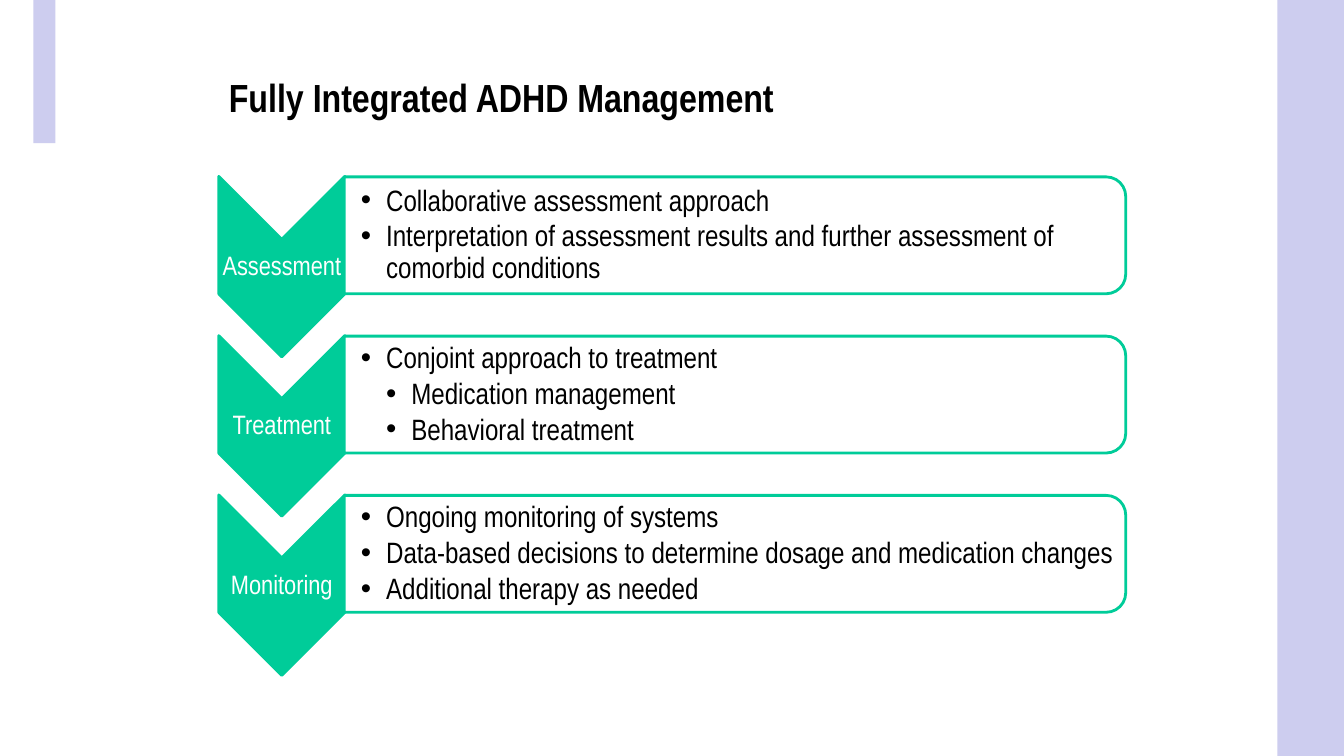
from lxml.etree import SubElement
from pptx import Presentation
from pptx.dml.color import RGBColor
from pptx.enum.shapes import MSO_SHAPE as Shape
from pptx.enum.text import MSO_ANCHOR as Anchor, MSO_AUTO_SIZE as Fit, PP_ALIGN as Align
from pptx.oxml.ns import qn
from pptx.util import Pt

PX = 9144
GREEN = RGBColor(0x00, 0xCC, 0x99)
LILAC = RGBColor(0xCD, 0xCD, 0xEF)
WHITE = RGBColor(0xFF, 0xFF, 0xFF)
BLACK = RGBColor(0x00, 0x00, 0x00)
STEP = 158
INDENT = 25
STAGES = [
    ("Assessment", [
        (1, "Collaborative assessment approach"),
        (1, "Interpretation of assessment results and further assessment of comorbid conditions"),
    ]),
    ("Treatment", [
        (1, "Conjoint approach to treatment"),
        (2, "Medication management"),
        (2, "Behavioral treatment"),
    ]),
    ("Monitoring", [
        (1, "Ongoing monitoring of systems"),
        (1, "Data-based decisions to determine dosage and medication changes"),
        (1, "Additional therapy as needed"),
    ]),
]


def draw(kind, box, fill, line=None, turn=0):
    shape = slide.shapes.add_shape(kind, *[n * PX for n in box])
    shape.shadow.inherit = False
    shape.rotation = turn
    shape.fill.solid()
    shape.fill.fore_color.rgb = fill
    if line is None:
        shape.line.fill.background()
    else:
        shape.line.color.rgb = line
        shape.line.width = Pt(2)


def write(frame, rows, size, color, inset, **form):
    look = dict(word_wrap=True, auto_size=Fit.NONE, vertical_anchor=Anchor.MIDDLE,
                margin_left=inset * PX, margin_right=PX, margin_top=PX, margin_bottom=PX)
    for name, value in look.items():
        setattr(frame, name, value)
    for i, (level, text) in enumerate(rows):
        para = frame.add_paragraph() if i else frame.paragraphs[0]
        para.text = text
        para.level = level
        for name, value in form.items():
            setattr(para, name, value)
        if level:
            props = para._p.get_or_add_pPr()
            props.set("marL", str(level * INDENT * PX))
            props.set("indent", str(-INDENT * PX))
            SubElement(props, qn("a:buFont"), typeface="Arial")
            SubElement(props, qn("a:buChar"), char="•")
        font = para.runs[0].font
        font.name = "Arial Narrow"
        font.size = Pt(size)
        font.color.rgb = color


deck = Presentation()
deck.slide_width, deck.slide_height = 1333 * PX, 750 * PX
slide = deck.slides.add_slide(deck.slide_layouts[5])

draw(Shape.RECTANGLE, (1267, 0, 66, 750), LILAC)
draw(Shape.RECTANGLE, (33, 0, 22, 142), LILAC)

title = slide.shapes.title
title.left, title.top, title.width, title.height = [n * PX for n in (217, 25, 883, 142)]
write(title.text_frame, [(0, "Fully Integrated ADHD Management")], 28, BLACK, 10,
      alignment=Align.LEFT)
title.text_frame.paragraphs[0].runs[0].font.bold = True

for i, (stage, points) in enumerate(STAGES):
    drop = i * STEP
    draw(Shape.CHEVRON, (190, 202 + drop, 179, 125), GREEN, GREEN, 90)
    label = slide.shapes.add_textbox(217 * PX, (238 + drop) * PX, 125 * PX, 54 * PX)
    write(label.text_frame, [(0, stage)], 19, WHITE, 1,
          alignment=Align.CENTER, line_spacing=0.9)
    draw(Shape.ROUND_2_SAME_RECTANGLE, (671, drop - 154, 116, 775), WHITE, GREEN, 90)
    body = slide.shapes.add_textbox(342 * PX, (181 + drop) * PX, 769 * PX, 105 * PX)
    write(body.text_frame, points, 21, BLACK, 16,
          alignment=Align.LEFT, line_spacing=0.9, space_after=Pt(3))

deck.save("out.pptx")
